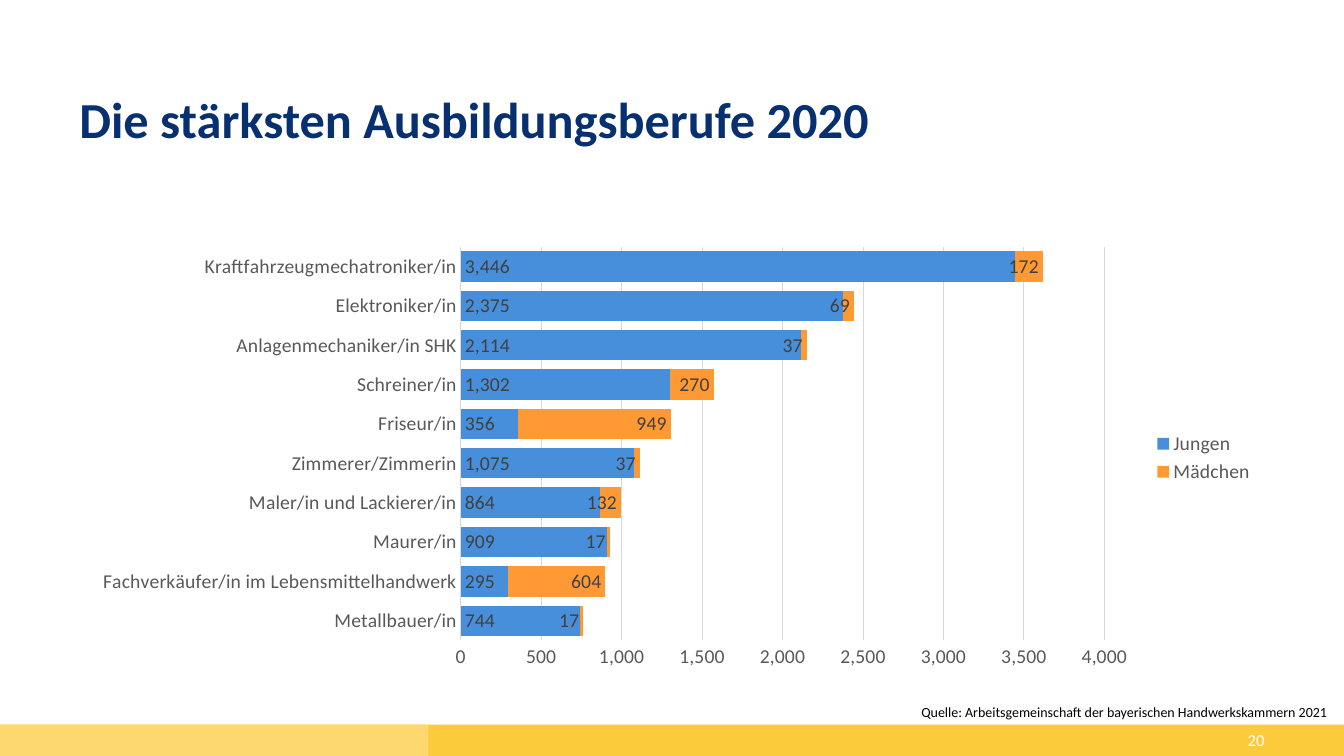
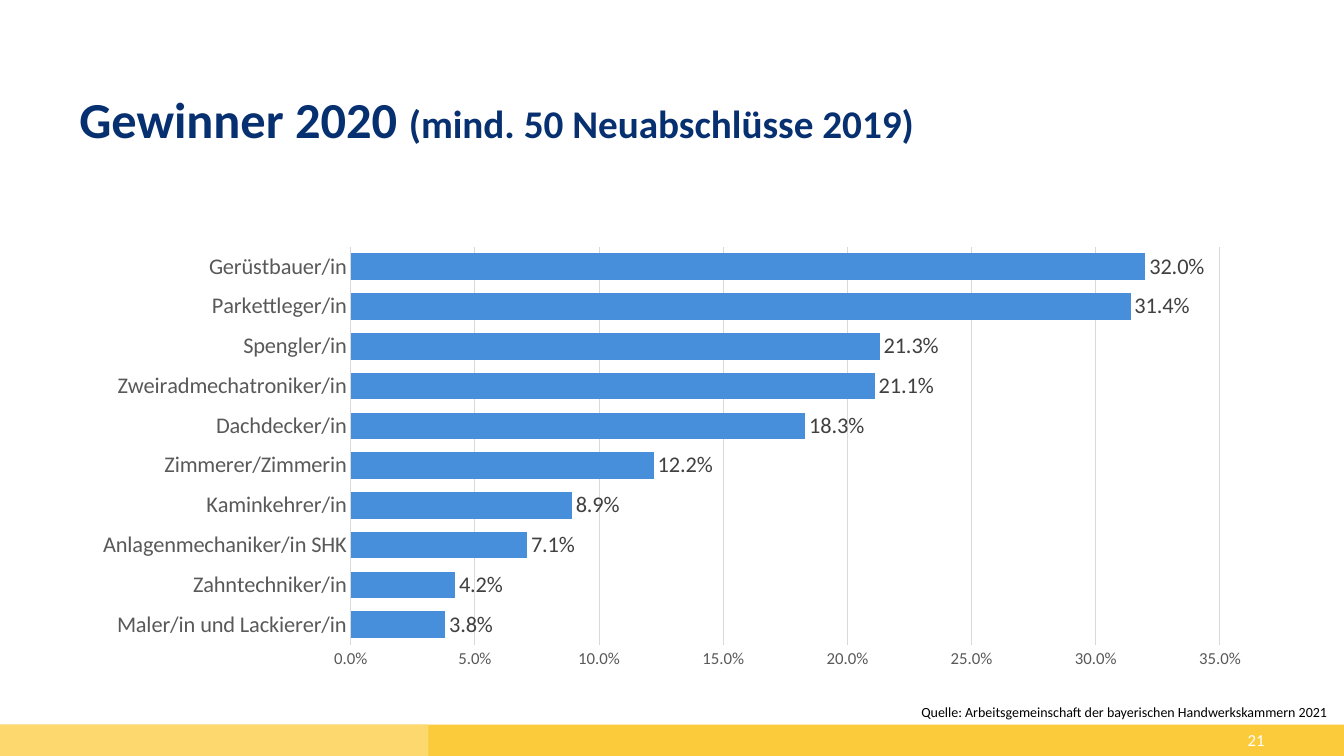
"""Build two slides on apprenticeships in the Bavarian skilled trades in 2020."""
import pptx
import pptx.chart.data
import pptx.dml.color
import pptx.enum.chart
import pptx.enum.shapes
import pptx.enum.text
import pptx.util

Cm = pptx.util.Cm
Pt = pptx.util.Pt
ChartType = pptx.enum.chart.XL_CHART_TYPE
LabelPosition = pptx.enum.chart.XL_LABEL_POSITION
Align = pptx.enum.text.PP_ALIGN
Anchor = pptx.enum.text.MSO_ANCHOR

FONT = "Calibri"
COLORS = {
    "title": "073070",
    "band": "FBCB3C",
    "band_light": "FCD86E",
    "boys": "488FDB",
    "girls": "FF9933",
    "axis_text": "595959",
    "label_text": "404040",
    "grid": "D9D9D9",
    "black": "000000",
    "white": "FFFFFF",
}
SLIDE_WIDTH, SLIDE_HEIGHT = 33.87, 19.05
MARGIN, CONTENT_WIDTH = 2, 29.87
BAND_TOP, BAND_HEIGHT = 18.26, 0.79
SOURCE = "Quelle: Arbeitsgemeinschaft der bayerischen Handwerkskammern 2021"

PAGES = [
    {
        "number": "20",
        "title": [("Die stärksten Ausbildungsberufe 2020", 36)],
        "type": ChartType.BAR_STACKED,
        "categories": [
            "Metallbauer/in", "Fachverkäufer/in im Lebensmittelhandwerk", "Maurer/in",
            "Maler/in und Lackierer/in", "Zimmerer/Zimmerin", "Friseur/in", "Schreiner/in",
            "Anlagenmechaniker/in SHK", "Elektroniker/in", "Kraftfahrzeugmechatroniker/in",
        ],
        "series": [
            ("Jungen", [744, 295, 909, 864, 1075, 356, 1302, 2114, 2375, 3446],
             "boys", LabelPosition.INSIDE_BASE),
            ("Mädchen", [17, 604, 17, 132, 37, 949, 270, 37, 69, 172],
             "girls", LabelPosition.INSIDE_END),
        ],
        "format": "#,##0", "maximum": 4000, "step": 500,
        "gap": 30, "overlap": 100, "text_size": 14, "scale_size": 14,
    },
    {
        "number": "21",
        "title": [("Gewinner 2020 ", 36), ("(mind. 50 Neuabschlüsse 2019)", 28)],
        "type": ChartType.BAR_CLUSTERED,
        "categories": [
            "Maler/in und Lackierer/in", "Zahntechniker/in", "Anlagenmechaniker/in SHK",
            "Kaminkehrer/in", "Zimmerer/Zimmerin", "Dachdecker/in", "Zweiradmechatroniker/in",
            "Spengler/in", "Parkettleger/in", "Gerüstbauer/in",
        ],
        "series": [
            ("Series 1",
             [0.038, 0.042, 0.071, 0.089, 0.122, 0.183, 0.211, 0.213, 0.314, 0.32],
             "boys", LabelPosition.OUTSIDE_END),
        ],
        "format": "0.0%", "maximum": 0.35, "step": 0.05,
        "gap": 50, "overlap": 0, "text_size": 16, "scale_size": 12,
    },
]


def rgb(name):
    """Return a palette colour."""
    return pptx.dml.color.RGBColor.from_string(COLORS[name])


def write(frame, text, size=12, color="black", bold=False, align=Align.LEFT, anchor=Anchor.TOP):
    """Add a formatted run to the first paragraph of a frame without insets."""
    frame.margin_left = frame.margin_right = frame.margin_top = frame.margin_bottom = 0
    frame.word_wrap = True
    frame.auto_size = pptx.enum.text.MSO_AUTO_SIZE.NONE
    frame.vertical_anchor = anchor
    paragraph = frame.paragraphs[0]
    paragraph.alignment = align
    run = paragraph.add_run()
    run.text = text
    run.font.name, run.font.size, run.font.bold = FONT, Pt(size), bold
    run.font.color.rgb = rgb(color)


deck = pptx.Presentation()
deck.slide_width, deck.slide_height = Cm(SLIDE_WIDTH), Cm(SLIDE_HEIGHT)
layout = deck.slide_layouts.get_by_name("Title Only")

layout_title = layout.placeholders[0]
layout_title.left, layout_title.top = Cm(MARGIN), Cm(2.39)
layout_title.width, layout_title.height = Cm(CONTENT_WIDTH), Cm(2.67)

for page in PAGES:
    slide = deck.slides.add_slide(layout)

    for band_width, band_color in [(SLIDE_WIDTH, "band"), (10.8, "band_light")]:
        band = slide.shapes.add_shape(
            pptx.enum.shapes.MSO_SHAPE.RECTANGLE,
            0, Cm(BAND_TOP), Cm(band_width), Cm(BAND_HEIGHT))
        band.shadow.inherit = False
        band.fill.solid()
        band.fill.fore_color.rgb = rgb(band_color)
        band.line.fill.background()

    heading = slide.shapes.title.text_frame
    for text, size in page["title"]:
        write(heading, text, size=size, color="title", bold=True)
    heading.paragraphs[0].line_spacing = 0.9

    page_number = slide.shapes.add_textbox(
        Cm(24.25), Cm(BAND_TOP), Cm(7.62), Cm(BAND_HEIGHT))
    write(page_number.text_frame, page["number"], color="white",
          align=Align.RIGHT, anchor=Anchor.MIDDLE)
    source = slide.shapes.add_textbox(Cm(23.22), Cm(17.73), Cm(10.6), Cm(0.43))
    write(source.text_frame, SOURCE, size=10)

    figures = pptx.chart.data.CategoryChartData(number_format=page["format"])
    figures.categories = page["categories"]
    for name, values, color, position in page["series"]:
        figures.add_series(name, values)
    chart = slide.shapes.add_chart(
        page["type"], Cm(MARGIN), Cm(6), Cm(CONTENT_WIDTH), Cm(11.07), figures).chart
    chart.has_title = False
    chart.font.name, chart.font.size = FONT, Pt(10)

    bars = chart.plots[0]
    bars.gap_width, bars.overlap = page["gap"], page["overlap"]
    bars.vary_by_categories = False

    jobs, scale = chart.category_axis, chart.value_axis
    for axis, size in [(jobs, page["text_size"]), (scale, page["scale_size"])]:
        axis.major_tick_mark = axis.minor_tick_mark = pptx.enum.chart.XL_TICK_MARK.NONE
        axis.tick_labels.font.name = FONT
        axis.tick_labels.font.size = Pt(size)
        axis.tick_labels.font.color.rgb = rgb("axis_text")
    scale.minimum_scale, scale.maximum_scale = 0, page["maximum"]
    scale.major_unit = page["step"]
    scale.tick_labels.number_format = page["format"]
    scale.tick_labels.number_format_is_linked = False
    scale.format.line.fill.background()
    scale.has_major_gridlines = True
    for line in (jobs.format.line, scale.major_gridlines.format.line):
        line.color.rgb = rgb("grid")
        line.width = Pt(0.75)

    for series, (name, values, color, position) in zip(bars.series, page["series"]):
        series.format.fill.solid()
        series.format.fill.fore_color.rgb = rgb(color)
        series.invert_if_negative = False
        labels = series.data_labels
        labels.show_value = True
        labels.position = position
        labels.number_format = page["format"]
        labels.number_format_is_linked = False
        labels.font.name, labels.font.size = FONT, Pt(page["text_size"])
        labels.font.color.rgb = rgb("label_text")

    chart.has_legend = len(page["series"]) > 1
    if chart.has_legend:
        chart.legend.position = pptx.enum.chart.XL_LEGEND_POSITION.RIGHT
        chart.legend.include_in_layout = False
        chart.legend.font.name, chart.legend.font.size = FONT, Pt(14)
        chart.legend.font.color.rgb = rgb("axis_text")

deck.save("out.pptx")
